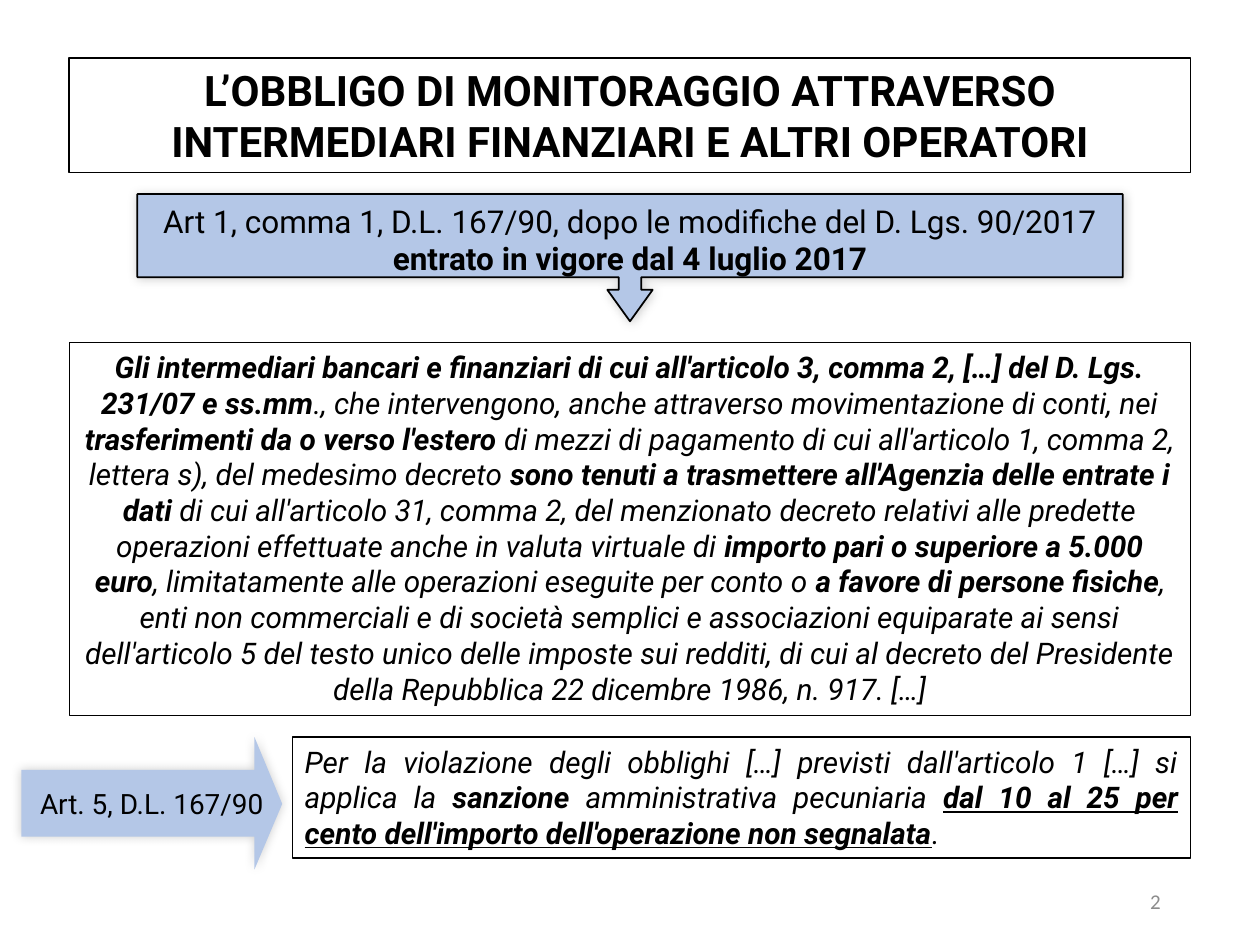
import pptx
import pptx.util
import pptx.dml.color
import pptx.enum.shapes
import pptx.enum.text
from lxml import etree

Inches = pptx.util.Inches
ALIGN = pptx.enum.text.PP_ALIGN
ANCHOR = pptx.enum.text.MSO_ANCHOR
GROW = pptx.enum.text.MSO_AUTO_SIZE.SHAPE_TO_FIT_TEXT
NS = "http://schemas.openxmlformats.org/drawingml/2006/main"
BOLD = {"bold": True}
ITALIC = {"italic": True}
STRONG = {"italic": True, "bold": True}
MARKED = {"italic": True, "bold": True, "underline": True}
BLUE = "B4C7E7"
TIGHT = (0.05, 0.05, 0.05, 0.05)

BODY = [
    ("Gli intermediari bancari e finanziari di cui all'articolo 3, comma 2, […] "
     "del D. Lgs. 231/07 e ss.mm", STRONG),
    ("., che intervengono, anche attraverso movimentazione di conti, nei ", ITALIC),
    ("trasferimenti da o verso l'estero ", STRONG),
    ("di mezzi di pagamento di cui all'articolo 1, comma 2, lettera s), "
     "del medesimo decreto ", ITALIC),
    ("sono tenuti a trasmettere all'Agenzia delle entrate i dati ", STRONG),
    ("di cui all'articolo 31, comma 2, del menzionato decreto relativi alle predette "
     "operazioni effettuate anche in valuta virtuale di ", ITALIC),
    ("importo pari o superiore a 5.000 euro", STRONG),
    (", limitatamente alle operazioni eseguite per conto o ", ITALIC),
    ("a favore di persone fisiche", STRONG),
    (", enti non commerciali e di società semplici e associazioni equiparate ai sensi "
     "dell'articolo 5 del testo unico delle imposte sui redditi, di cui al decreto del "
     "Presidente della Repubblica 22 dicembre 1986, n. 917. […]", ITALIC),
]
FINE = [
    ("Per la violazione degli obblighi […] previsti dall'articolo 1 […] "
     "si applica la ", ITALIC),
    ("sanzione", STRONG),
    (" amministrativa pecuniaria ", ITALIC),
    ("dal 10 al 25 per cento dell'importo dell'operazione non segnalata", MARKED),
    (".", ITALIC),
]


def color(code):
    return pptx.dml.color.RGBColor.from_string(code)


def write(shape, runs, size, align=ALIGN.CENTER, anchor=ANCHOR.MIDDLE,
          inset=(0.1, 0.05, 0.1, 0.05), font="Roboto", ink="000000"):
    """Fill a shape with one paragraph of formatted runs."""
    frame = shape.text_frame
    frame.word_wrap = True
    frame.vertical_anchor = anchor
    for side, gap in zip(("left", "top", "right", "bottom"), inset):
        setattr(frame, "margin_" + side, Inches(gap))
    para = frame.paragraphs[0]
    para.alignment = align
    for text, style in runs:
        run = para.add_run()
        run.text = text
        look = {"name": font, "size": pptx.util.Pt(size), **style}
        for key, value in look.items():
            setattr(run.font, key, value)
        run.font.color.rgb = color(ink)


def paint(shape, fill=None, width=None):
    """Set fill and black outline; None means none."""
    shape.shadow.inherit = False
    if fill:
        shape.fill.solid()
        shape.fill.fore_color.rgb = color(fill)
    else:
        shape.fill.background()
    if width:
        shape.line.color.rgb = color("000000")
        shape.line.width = pptx.util.Pt(width)
    else:
        shape.line.fill.background()


def add_box(slide, area, runs, size, fill=None, width=0.75, **layout):
    kind = pptx.enum.shapes.MSO_SHAPE.RECTANGLE
    box = slide.shapes.add_shape(kind, *map(Inches, area))
    paint(box, fill, width)
    write(box, runs, size, **layout)
    box.text_frame.auto_size = GROW


def add_form(slide, points, runs, size, width=None, inset=TIGHT):
    """Draw a closed blue outline with a soft shadow."""
    spots = [(Inches(x), Inches(y)) for x, y in points]
    build = slide.shapes.build_freeform(*spots[0])
    build.add_line_segments(spots[1:], close=True)
    form = build.convert_to_shape()
    paint(form, BLUE, width)
    glow = form._element.spPr.find(f"{{{NS}}}effectLst")
    outer = etree.SubElement(glow, f"{{{NS}}}outerShdw", blurRad="76200",
                             dist="0", dir="13500000", rotWithShape="0")
    tint = etree.SubElement(outer, f"{{{NS}}}srgbClr", val="000000")
    etree.SubElement(tint, f"{{{NS}}}alpha", val="20000")
    write(form, runs, size, inset=inset)


def main():
    deck = pptx.Presentation()
    deck.slide_width, deck.slide_height = Inches(10), Inches(7.5)
    slide = deck.slides.add_slide(deck.slide_layouts[6])

    # Title and text of the law
    add_box(slide, (0.55, 0.46, 8.9, 0.91),
            [("L’OBBLIGO DI MONITORAGGIO ATTRAVERSO INTERMEDIARI FINANZIARI "
              "E ALTRI OPERATORI", BOLD)],
            24, fill="FFFFFF", width=1, inset=TIGHT)
    add_box(slide, (0.55, 2.72, 8.9, 2.96), BODY, 17, anchor=ANCHOR.TOP)

    # Callout pointing down, symmetric about the slide's centre
    half = [(3.91, 1.54), (3.91, 2.2), (0.09, 2.2), (0.09, 2.3), (0.18, 2.3)]
    right = [(5 + x, y) for x, y in half]
    left = [(5 - x, y) for x, y in reversed(half)]
    add_form(slide, right + [(5, 2.55)] + left,
             [("Art 1, comma 1, D.L. 167/90, dopo le modifiche del D. Lgs. 90/2017 ", {}),
              ("entrato in vigore dal 4 luglio 2017", BOLD)],
             18, width=1, inset=(0.05, 0.05, 0.05, 0.34))

    # Slide number
    number = slide.shapes.add_textbox(*map(Inches, (7.06, 6.95, 2.25, 0.4)))
    write(number, [("2", {})], 12, align=ALIGN.RIGHT, font="Calibri", ink="8C8C8C")

    # Penalty and the arrow leading to it
    add_box(slide, (2.32, 5.85, 7.13, 0.96), FINE, 17,
            align=ALIGN.JUSTIFY, anchor=ANCHOR.TOP)
    add_form(slide, [(0.17, 6.11), (2.02, 6.11), (2.02, 5.85), (2.24, 6.38),
                     (2.02, 6.9), (2.02, 6.64), (0.17, 6.64)],
             [("Art. 5, D.L. 167/90", {})], 16)

    deck.save("out.pptx")


if __name__ == "__main__":
    main()
